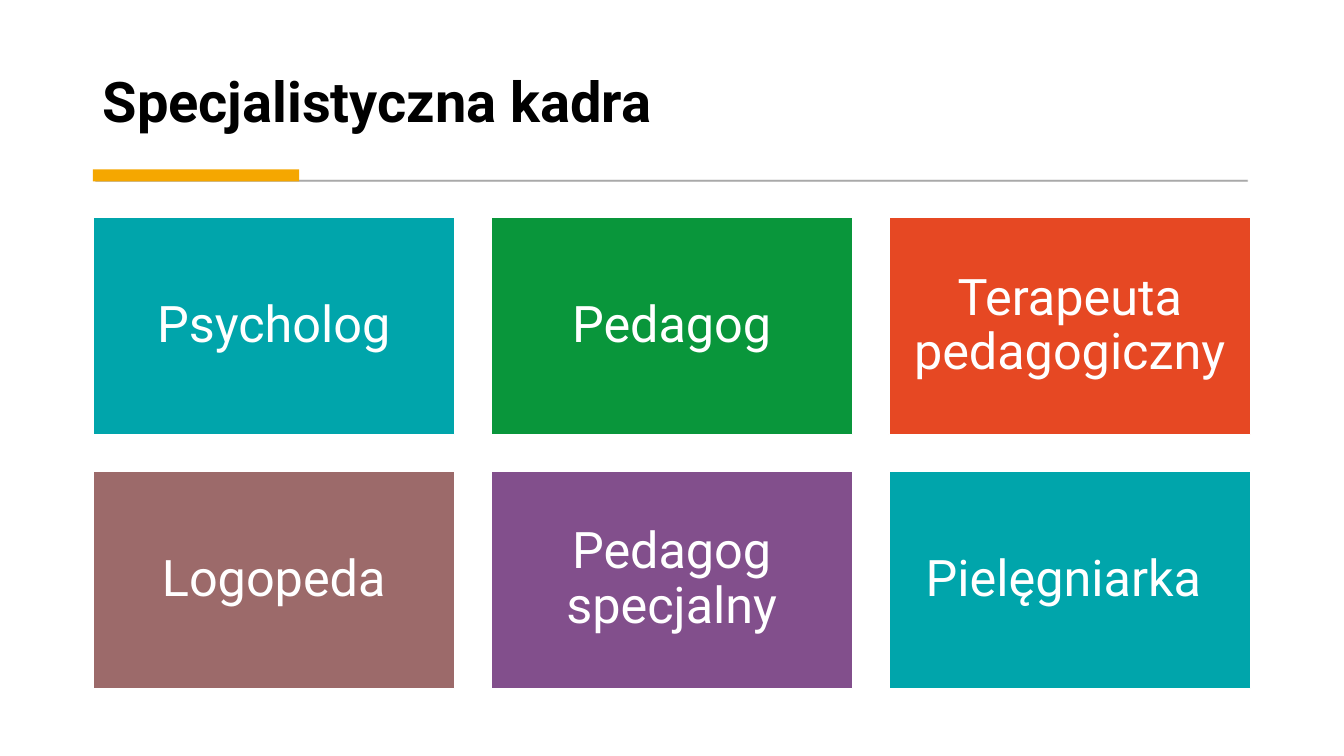
from pptx import Presentation
from pptx.dml.color import RGBColor
from pptx.enum.shapes import MSO_SHAPE as Shape
from pptx.enum.text import MSO_ANCHOR as Anchor, PP_ALIGN as Align
from pptx.oxml.ns import qn
from pptx.util import Cm, Pt
from lxml.etree import SubElement

WHITE = RGBColor(0xFF, 0xFF, 0xFF)
BLACK = RGBColor(0x00, 0x00, 0x00)
GRAY = RGBColor(0x59, 0x59, 0x59)
AMBER = RGBColor(0xF5, 0xA7, 0x00)
TEAL = RGBColor(0x00, 0xA5, 0xAB)
GREEN = RGBColor(0x09, 0x96, 0x3B)
ORANGE = RGBColor(0xE6, 0x48, 0x23)
ROSE = RGBColor(0x9C, 0x6A, 0x6A)
PURPLE = RGBColor(0x82, 0x4F, 0x8C)

FONT = "Roboto"
COLUMNS = 3
TILE_GAP = Cm(0.91)
SPECIALISTS = [
    ("Psycholog", TEAL),
    ("Pedagog", GREEN),
    ("Terapeuta pedagogiczny", ORANGE),
    ("Logopeda", ROSE),
    ("Pedagog specjalny", PURPLE),
    ("Pielęgniarka ", TEAL),
]


def add_rectangle(slide, left, top, width, height, color):
    shape = slide.shapes.add_shape(Shape.RECTANGLE, left, top, width, height)
    shape.shadow.inherit = False
    shape.fill.solid()
    shape.fill.fore_color.rgb = color
    shape.line.fill.background()
    return shape


def write_text(shape, text, size, color, bold=False):
    frame = shape.text_frame
    frame.word_wrap = True
    frame.text = text
    paragraph = frame.paragraphs[0]
    paragraph.line_spacing = 0.9
    paragraph.font.name = FONT
    paragraph.font.size = Pt(size)
    paragraph.font.bold = bold
    paragraph.font.color.rgb = color
    return frame, paragraph


def add_title(slide, left, top, width, height):
    title = slide.shapes.add_textbox(left, top, width, height)
    frame, _ = write_text(title, "Specjalistyczna kadra", 40, BLACK, bold=True)
    frame.vertical_anchor = Anchor.BOTTOM


def add_divider(slide, left, top, width, height):
    rule = add_rectangle(slide, left + Cm(0.07), top + Cm(0.27),
                         width - Cm(0.15), Cm(0.03), GRAY)
    rule.line.color.rgb = GRAY
    rule.line.width = Pt(0.75)
    for color in rule.element.spPr.iter(qn("a:srgbClr")):
        SubElement(color, qn("a:alpha"), val="30000")
    add_rectangle(slide, left, top, Cm(5.2), height, AMBER)


def add_tile(slide, left, top, width, height, text, color):
    tile = add_rectangle(slide, left, top, width, height, color)
    tile.line.color.rgb = WHITE
    tile.line.width = Pt(1)
    frame, paragraph = write_text(tile, text, 36, WHITE)
    frame.vertical_anchor = Anchor.MIDDLE
    frame.margin_left = frame.margin_right = Cm(0.38)
    frame.margin_top = frame.margin_bottom = Cm(0.38)
    paragraph.alignment = Align.CENTER


def add_tile_grid(slide, left, top, width, height):
    rows = len(SPECIALISTS) // COLUMNS
    tile_width = (width - (COLUMNS - 1) * TILE_GAP) // COLUMNS
    tile_height = (height - (rows - 1) * TILE_GAP) // rows
    for index, (text, color) in enumerate(SPECIALISTS):
        row, column = divmod(index, COLUMNS)
        add_tile(slide, left + column * (tile_width + TILE_GAP),
                 top + row * (tile_height + TILE_GAP),
                 tile_width, tile_height, text, color)


def main():
    presentation = Presentation()
    presentation.slide_width = Cm(33.87)
    presentation.slide_height = Cm(19.05)
    slide = presentation.slides.add_slide(presentation.slide_layouts[6])
    left, width = Cm(2.34), Cm(29.18)
    add_title(slide, left, Cm(0.71), width, Cm(2.82))
    add_divider(slide, left, Cm(4.27), width, Cm(0.3))
    add_tile_grid(slide, left, Cm(5.47), width, Cm(11.88))
    presentation.save("out.pptx")


if __name__ == "__main__":
    main()
